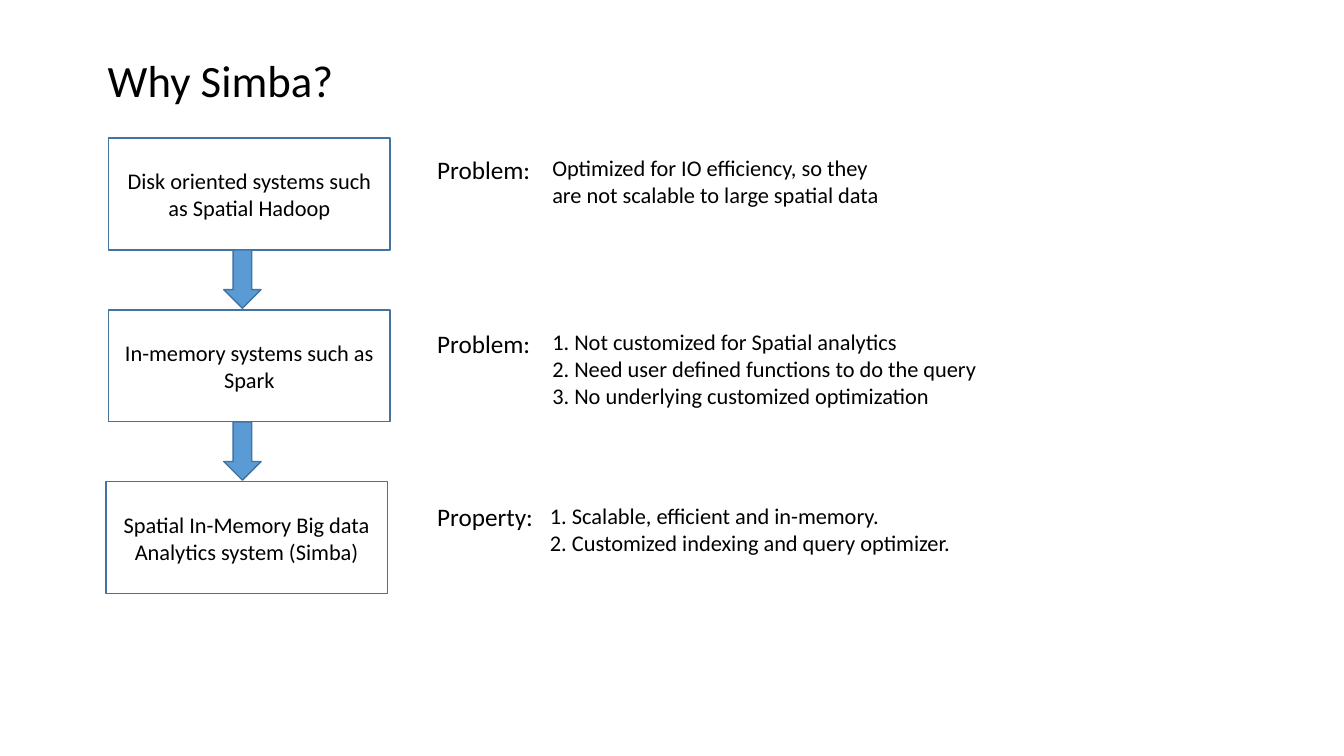
from pptx import Presentation
from pptx.dml.color import RGBColor
from pptx.enum.shapes import MSO_SHAPE
from pptx.enum.text import MSO_ANCHOR, MSO_AUTO_SIZE, PP_ALIGN
from pptx.util import Cm, Pt

INK, BLUE, EDGE = "000000", "5B9BD5", "43739E"
BOX_W, BOX_H = 7.09, 2.82
ROW, NOTE_ROW = 4.33, 4.38

# System, its left edge, label, label width, notes' left edge, notes' width, notes
STAGES = [
    ("Disk oriented systems such as Spatial Hadoop", 2.74,
     "Problem:", 2.9, 13.67, 8.97,
     ["Optimized for IO efficiency, so they",
      "are not scalable to large spatial data"]),
    ("In-memory systems such as Spark", 2.74,
     "Problem:", 2.9, 13.67, 11.35,
     ["1. Not customized for Spatial analytics",
      "2. Need user defined functions to do the query",
      "3. No underlying customized optimization"]),
    ("Spatial In-Memory Big data Analytics system (Simba)", 2.67,
     "Property:", 2.95, 13.61, 10.72,
     ["1. Scalable, efficient and in-memory.",
      "2. Customized indexing and query optimizer."]),
]


def color(code):
    return RGBColor.from_string(code)


def write(frame, lines, size, align=PP_ALIGN.LEFT):
    for i, line in enumerate(lines):
        para = frame.paragraphs[0] if i == 0 else frame.add_paragraph()
        para.text = line
        para.alignment = align
        para.font.name = "Calibri"
        para.font.size = Pt(size)
        para.font.color.rgb = color(INK)


def shape(slide, kind, left, top, width, height, fill=None):
    item = slide.shapes.add_shape(kind, Cm(left), Cm(top), Cm(width), Cm(height))
    item.shadow.inherit = False
    item.line.color.rgb = color(EDGE)
    item.line.width = Pt(1)
    if fill:
        item.fill.solid()
        item.fill.fore_color.rgb = color(fill)
    else:
        item.fill.background()
    return item


def label(slide, left, top, width, height, lines, size):
    frame = slide.shapes.add_textbox(
        Cm(left), Cm(top), Cm(width), Cm(height)).text_frame
    frame.word_wrap = False
    frame.auto_size = MSO_AUTO_SIZE.SHAPE_TO_FIT_TEXT
    write(frame, lines, size)


def heading(slide, left, top, width, height):
    title = slide.shapes.title
    title.left, title.top = Cm(left), Cm(top)
    title.width, title.height = Cm(width), Cm(height)
    frame = title.text_frame
    frame.vertical_anchor = MSO_ANCHOR.MIDDLE
    write(frame, ["Why Simba?"], 32)
    frame.paragraphs[0].line_spacing = 0.9


def system(slide, left, top, name):
    box = shape(slide, MSO_SHAPE.RECTANGLE, left, top, BOX_W, BOX_H)
    frame = box.text_frame
    frame.word_wrap = True
    frame.vertical_anchor = MSO_ANCHOR.MIDDLE
    write(frame, [name], 16, PP_ALIGN.CENTER)


def remark(slide, left, top, name, width, start, span, notes):
    label(slide, left, top, width, 1.03, [name], 18)
    label(slide, start, top, span, 0.26 + 0.68 * len(notes), notes, 16)


def main():
    deck = Presentation()
    deck.slide_width, deck.slide_height = Cm(33.87), Cm(19.05)
    slide = deck.slides.add_slide(deck.slide_layouts[5])
    heading(slide, 2.46, 0.25, 29.21, 3.68)

    # One row per stage, with an arrow down to the next
    for i, (name, left, *notes) in enumerate(STAGES):
        top = 3.48 + i * ROW
        system(slide, left, top, name)
        remark(slide, 10.77, 3.76 + i * NOTE_ROW, *notes)
        if i < len(STAGES) - 1:
            shape(slide, MSO_SHAPE.DOWN_ARROW, 5.64, top + BOX_H,
                  0.94, 1.47, BLUE)

    deck.save("out.pptx")


if __name__ == "__main__":
    main()
